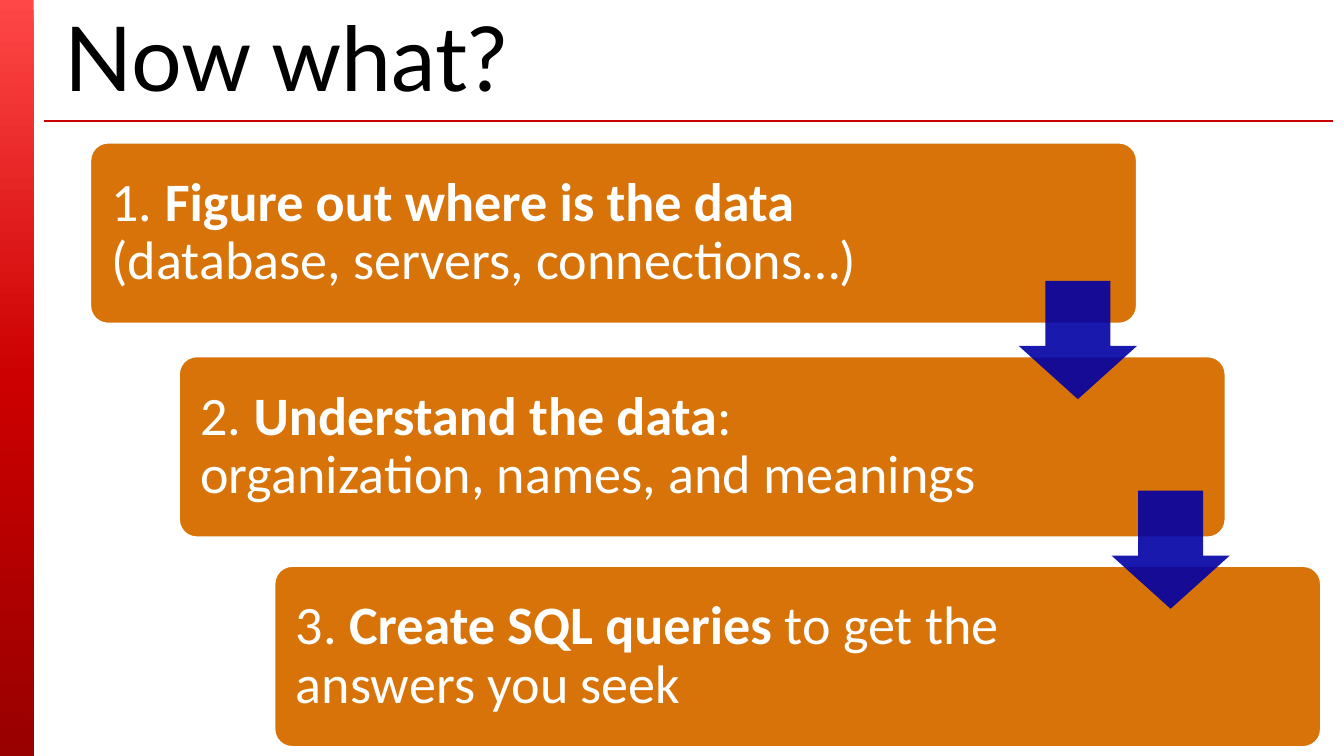
"""Build a slide of three cascading steps joined by down arrows."""
from dataclasses import dataclass

from lxml import etree
from pptx import Presentation
from pptx import util as u
from pptx.dml.color import RGBColor
from pptx.enum import shapes, text
from pptx.oxml import ns


@dataclass(frozen=True)
class Theme:
    white: str = "FFFFFF"
    black: str = "000000"
    box: str = "D77308"
    arrow: str = "0000A5"
    rule: str = "C80000"
    bar: tuple = ((0, "FF4747"), (50, "CC0000"), (100, "990000"))
    title_font: str = "Lato"
    body_font: str = "Calibri"
    title_size: int = 48
    body_size: int = 29


@dataclass(frozen=True)
class Step:
    left: float
    top: float
    text_width: float
    lead: str
    rest: str
    new_line: bool = False


@dataclass(frozen=True)
class Arrow:
    left: float
    top: float


THEME = Theme()
WIDTH = 10
HEIGHT = WIDTH * 9 / 16
BOX_WIDTH, BOX_HEIGHT, TEXT_GAP = 7.79, 1.35, 0.04
ARROW_SIZE = 0.88
STEPS = (
    Step(0.67, 1.06, 6.33, "Figure out where is the data",
         "(database, servers, connections…)", True),
    Step(1.33, 2.65, 6.15, "Understand the data",
         ": organization, names, and meanings"),
    Step(2.04, 4.21, 6.15, "Create SQL queries ", "to get the answers you seek"),
)
ARROWS = (Arrow(7.58, 2.09), Arrow(8.27, 3.65))


def rgb(color: str) -> RGBColor:
    return RGBColor.from_string(color)


def add_shape(s, kind, left: float, top: float, width: float, height: float):
    sp = s.shapes.add_shape(kind, u.Inches(left), u.Inches(top),
                            u.Inches(width), u.Inches(height))
    sp.shadow.inherit = False
    sp.line.fill.background()
    return sp


def add_text(s, left: float, top: float, width: float, height: float):
    tb = s.shapes.add_textbox(u.Inches(left), u.Inches(top),
                              u.Inches(width), u.Inches(height))
    tf = tb.text_frame
    tf.word_wrap = True
    tf.vertical_anchor = text.MSO_ANCHOR.MIDDLE
    return tf


def add_run(p, words: str, font: str, size: int, color: str, bold: bool = False) -> None:
    r = p.add_run()
    r.text = words
    r.font.name = font
    r.font.size = u.Pt(size)
    r.font.bold = bold
    r.font.color.rgb = rgb(color)


def draw_bar(s) -> None:
    sp = add_shape(s, shapes.MSO_SHAPE.RECTANGLE, 0, 0, 0.25, HEIGHT)
    sp.fill.gradient()
    grad = sp.element.spPr.find(ns.qn("a:gradFill"))
    for child in list(grad):
        grad.remove(child)
    stops = etree.SubElement(grad, ns.qn("a:gsLst"))
    for position, color in THEME.bar:
        stop = etree.SubElement(stops, ns.qn("a:gs"), pos=str(position * 1000))
        etree.SubElement(stop, ns.qn("a:srgbClr"), val=color)
    etree.SubElement(grad, ns.qn("a:lin"), ang="5400000", scaled="0")


def draw_rule(s) -> None:
    y = u.Inches(0.9)
    line = s.shapes.add_connector(shapes.MSO_CONNECTOR.STRAIGHT,
                                  u.Inches(0.33), y, u.Inches(9.92), y)
    line.line.color.rgb = rgb(THEME.rule)
    line.line.width = u.Pt(0.75)
    etree.SubElement(line.element.spPr, ns.qn("a:effectLst"))


def draw_title(s) -> None:
    tf = add_text(s, 0.38, 0.15, 9.58, 0.53)
    add_run(tf.paragraphs[0], "Now what?", THEME.title_font,
            THEME.title_size, THEME.black)


def draw_step(s, number: int, step: Step) -> None:
    sp = add_shape(s, shapes.MSO_SHAPE.ROUNDED_RECTANGLE,
                   step.left, step.top, BOX_WIDTH, BOX_HEIGHT)
    sp.adjustments[0] = 0.1
    sp.fill.solid()
    sp.fill.fore_color.rgb = rgb(THEME.box)
    sp.line.color.rgb = rgb(THEME.white)
    sp.line.width = u.Pt(1.25)

    tf = add_text(s, step.left + TEXT_GAP, step.top + TEXT_GAP,
                  step.text_width, BOX_HEIGHT - 2 * TEXT_GAP)
    tf.margin_left = tf.margin_right = u.Inches(0.12)
    tf.margin_top = tf.margin_bottom = u.Inches(0.12)
    p = tf.paragraphs[0]
    p.line_spacing = 0.9
    style = (THEME.body_font, THEME.body_size, THEME.white)
    add_run(p, f"{number}. ", *style)
    add_run(p, step.lead, *style, bold=True)
    if step.new_line:
        p.add_line_break()
    add_run(p, step.rest, *style)


def draw_arrow(s, arrow: Arrow) -> None:
    sp = add_shape(s, shapes.MSO_SHAPE.DOWN_ARROW,
                   arrow.left, arrow.top, ARROW_SIZE, ARROW_SIZE)
    sp.adjustments[0] = 0.55
    sp.adjustments[1] = 0.45
    sp.fill.solid()
    sp.fill.fore_color.rgb = rgb(THEME.arrow)
    color = sp.element.spPr.find(ns.qn("a:solidFill"))[0]
    etree.SubElement(color, ns.qn("a:alpha"), val="90000")


def main() -> None:
    prs = Presentation()
    prs.slide_width, prs.slide_height = u.Inches(WIDTH), u.Inches(HEIGHT)
    s = prs.slides.add_slide(prs.slide_layouts[6])
    draw_bar(s)
    draw_rule(s)
    draw_title(s)
    for number, step in enumerate(STEPS, 1):
        draw_step(s, number, step)
    for arrow in ARROWS:
        draw_arrow(s, arrow)
    prs.save("out.pptx")


if __name__ == "__main__":
    main()
